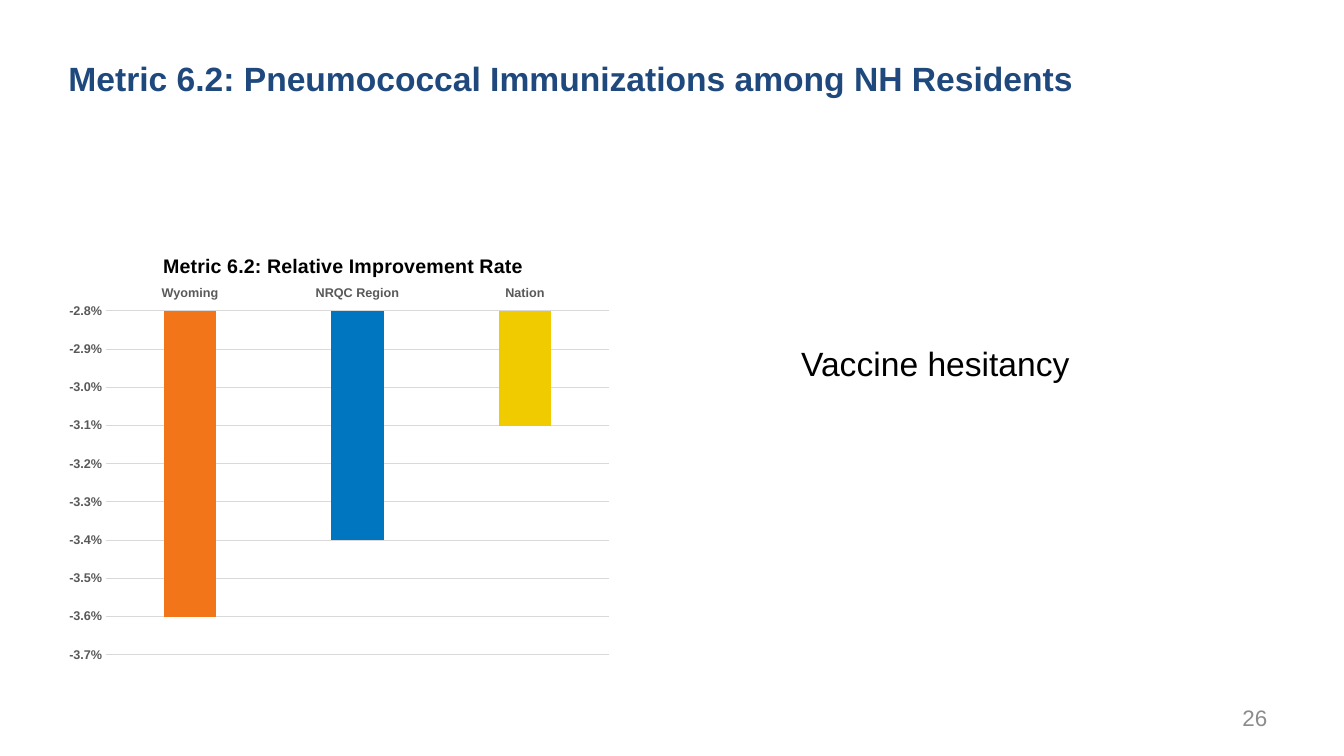
from dataclasses import dataclass

from lxml.etree import SubElement
from pptx import Presentation
from pptx.chart.chart import Chart
from pptx.chart.data import CategoryChartData
from pptx.dml.color import RGBColor
from pptx.enum.chart import XL_AXIS_CROSSES, XL_CHART_TYPE, XL_TICK_LABEL_POSITION, XL_TICK_MARK
from pptx.enum.text import MSO_ANCHOR, PP_ALIGN
from pptx.oxml.ns import qn
from pptx.slide import Slide
from pptx.text.text import Font
from pptx.util import Pt

COLORS = {
    "navy": "1F497D", "black": "000000", "gray": "8C8C8C", "label": "595959",
    "grid": "D9D9D9", "orange": "F27519", "blue": "0075C0", "yellow": "F0CB00",
}


@dataclass
class Label:
    text: str
    left: float
    top: float
    width: float
    height: float
    size: float
    color: str
    bold: bool = False
    anchor: MSO_ANCHOR = MSO_ANCHOR.TOP
    align: PP_ALIGN = PP_ALIGN.LEFT
    bottom_inset: float = 3.6


@dataclass
class Bar:
    category: str
    rate: float
    color: str


LABELS = [
    Label("Metric 6.2: Pneumococcal Immunizations among NH Residents", 41.76, 18, 740.16, 104.4,
          24, "navy", bold=True, anchor=MSO_ANCHOR.MIDDLE, bottom_inset=32),
    Label("Vaccine hesitancy", 565.2, 241.2, 357.84, 36, 24, "black"),
    Label("26", 696.24, 498.24, 216, 28.8, 16, "gray",
          anchor=MSO_ANCHOR.MIDDLE, align=PP_ALIGN.RIGHT),
]
BARS = [
    Bar("Wyoming", -0.036, "orange"),
    Bar("NRQC Region", -0.034, "blue"),
    Bar("Nation", -0.031, "yellow"),
]


def rgb(name: str) -> RGBColor:
    return RGBColor.from_string(COLORS[name])


def style_font(font: Font, size: float, color: str, bold: bool) -> None:
    font.name = "Arial"
    font.size = Pt(size)
    font.bold = bold
    font.color.rgb = rgb(color)


def add_label(slide: Slide, label: Label) -> None:
    shape = slide.shapes.add_textbox(
        Pt(label.left), Pt(label.top), Pt(label.width), Pt(label.height))
    frame = shape.text_frame
    frame.word_wrap = True
    frame.vertical_anchor = label.anchor
    frame.margin_bottom = Pt(label.bottom_inset)
    paragraph = frame.paragraphs[0]
    paragraph.text = label.text
    paragraph.alignment = label.align
    style_font(paragraph.font, label.size, label.color, label.bold)


def set_layout(element, index: int, settings: dict[str, str | float]) -> None:
    """Place a chart part by hand, in fractions of the chart's size."""
    for layout in element.findall(qn("c:layout")):
        element.remove(layout)
    layout = SubElement(element, qn("c:layout"))
    element.insert(index, layout)
    manual = SubElement(layout, qn("c:manualLayout"))
    for name, value in settings.items():
        SubElement(manual, qn(f"c:{name}")).set("val", str(value))


def style_axes(chart: Chart) -> None:
    category_axis, value_axis = chart.category_axis, chart.value_axis
    for axis in (category_axis, value_axis):
        axis.major_tick_mark = axis.minor_tick_mark = XL_TICK_MARK.NONE
        style_font(axis.tick_labels.font, 9, "label", True)
    category_axis.tick_label_position = XL_TICK_LABEL_POSITION.HIGH
    value_axis.minimum_scale = -0.037
    value_axis.maximum_scale = -0.028
    value_axis.major_unit = 0.001
    value_axis.crosses = XL_AXIS_CROSSES.MAXIMUM
    value_axis.tick_labels.number_format = "0.0%"
    value_axis.tick_labels.number_format_is_linked = False
    value_axis.format.line.fill.background()
    for line in (category_axis.format.line, value_axis.major_gridlines.format.line):
        line.color.rgb = rgb("grid")
        line.width = Pt(0.75)


def add_rate_chart(slide: Slide) -> None:
    data = CategoryChartData(number_format="0.0%")
    data.categories = [bar.category for bar in BARS]
    data.add_series("Series 1", [bar.rate for bar in BARS])
    chart = slide.shapes.add_chart(
        XL_CHART_TYPE.COLUMN_CLUSTERED, Pt(41.76), Pt(165.6), Pt(401.04), Pt(313.92), data).chart
    style_font(chart.font, 10, "black", True)
    chart.has_legend = False

    paragraph = chart.chart_title.text_frame.paragraphs[0]
    paragraph.text = "Metric 6.2: Relative Improvement Rate"
    style_font(paragraph.font, 14, "black", True)
    chart.chart_title.include_in_layout = False
    set_layout(chart.chart_title._element, 1,
               {"xMode": "edge", "yMode": "edge", "x": 0.18, "y": 0.04})
    set_layout(chart._chartSpace.chart.plotArea, 0,
               {"layoutTarget": "inner", "xMode": "edge", "yMode": "edge",
                "x": 0.085, "y": 0.18, "w": 0.895, "h": 0.783})
    style_axes(chart)

    plot = chart.plots[0]
    plot.vary_by_categories = False
    plot.gap_width = 219
    plot.overlap = -27
    series = plot.series[0]
    series.invert_if_negative = False
    for index, bar in enumerate(BARS):
        fill = series.points[index].format.fill
        fill.solid()
        fill.fore_color.rgb = rgb(bar.color)


def main() -> None:
    presentation = Presentation()
    presentation.slide_width = Pt(960)
    presentation.slide_height = Pt(540)
    slide = presentation.slides.add_slide(presentation.slide_layouts[6])
    for label in LABELS:
        add_label(slide, label)
    add_rate_chart(slide)
    presentation.save("out.pptx")


if __name__ == "__main__":
    main()
